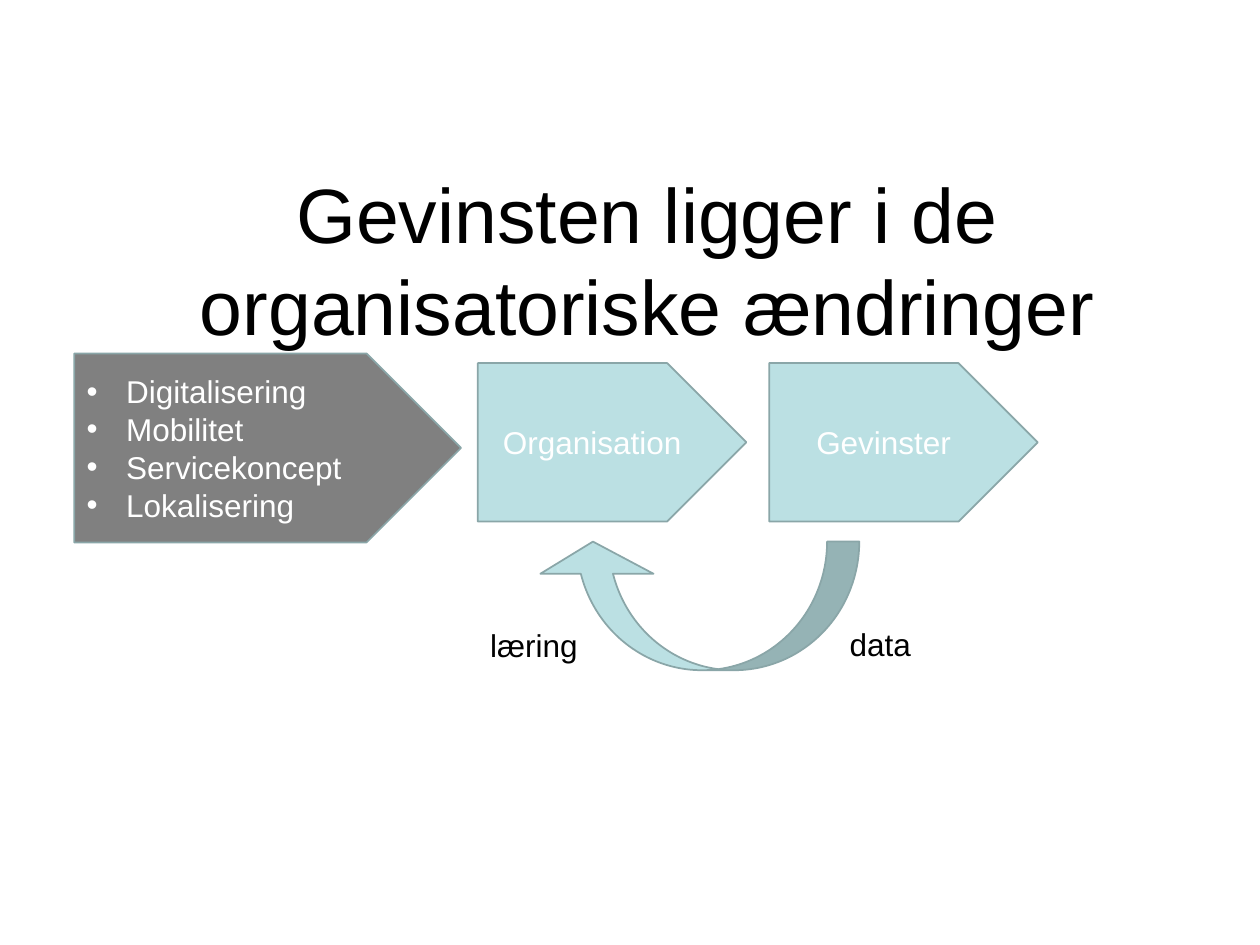
from dataclasses import dataclass

from lxml.etree import SubElement
from pptx import Presentation
from pptx.enum.shapes import MSO_SHAPE
from pptx.enum.text import MSO_ANCHOR, PP_ALIGN
from pptx.dml.color import RGBColor
from pptx.oxml.ns import qn
from pptx.util import Pt

COLOURS = {
    "grey": "808080",
    "aqua": "BBE0E3",
    "edge": "8AA6A8",
    "white": "FFFFFF",
    "black": "000000",
}
FONT = "Arial"
INDENT = 22.5


@dataclass
class Box:
    left: float
    top: float
    width: float
    height: float

    def frame(self) -> tuple:
        return Pt(self.left), Pt(self.top), Pt(self.width), Pt(self.height)


@dataclass
class Step:
    box: Box
    fill: str
    lines: list[str]
    bullets: bool = False


@dataclass
class Label:
    box: Box
    text: str


def colour(name: str) -> RGBColor:
    return RGBColor.from_string(COLOURS[name])


def write(frame, lines: list[str], size: float, tint: str, align) -> None:
    for i, line in enumerate(lines):
        para = frame.paragraphs[0] if i == 0 else frame.add_paragraph()
        para.text = line
        para.alignment = align
        para.font.name = FONT
        para.font.size = Pt(size)
        para.font.color.rgb = colour(tint)


def bullet(para) -> None:
    props = para._p.get_or_add_pPr()
    props.set("marL", str(Pt(INDENT)))
    props.set("indent", str(Pt(-INDENT)))
    SubElement(props, qn("a:buFont"), typeface=FONT)
    SubElement(props, qn("a:buChar"), char="•")


def draw_shape(slide, kind, box: Box, fill: str):
    shape = slide.shapes.add_shape(kind, *box.frame())
    shape.shadow.inherit = False
    shape.fill.solid()
    shape.fill.fore_color.rgb = colour(fill)
    shape.line.color.rgb = colour("edge")
    shape.line.width = Pt(1)
    return shape


def draw_step(slide, step: Step) -> None:
    shape = draw_shape(slide, MSO_SHAPE.PENTAGON, step.box, step.fill)
    frame = shape.text_frame
    frame.vertical_anchor = MSO_ANCHOR.MIDDLE
    align = PP_ALIGN.LEFT if step.bullets else PP_ALIGN.CENTER
    write(frame, step.lines, 18, "white", align)
    if step.bullets:
        for para in frame.paragraphs:
            bullet(para)


def draw_title(slide, label: Label) -> None:
    frame = slide.shapes.add_textbox(*label.box.frame()).text_frame
    frame.word_wrap = True
    frame.vertical_anchor = MSO_ANCHOR.MIDDLE
    frame.margin_left = frame.margin_right = 0
    frame.margin_top = frame.margin_bottom = 0
    write(frame, [label.text], 44, "black", PP_ALIGN.CENTER)


def draw_label(slide, label: Label) -> None:
    frame = slide.shapes.add_textbox(*label.box.frame()).text_frame
    frame.word_wrap = False
    write(frame, [label.text], 18, "black", PP_ALIGN.LEFT)


def draw_loop(slide, box: Box) -> None:
    arrow = draw_shape(slide, MSO_SHAPE.CURVED_UP_ARROW, box, "aqua")
    for i, value in enumerate((0.25, 0.88, 0.25)):
        arrow.adjustments[i] = value
    arrow._element.spPr.find(qn("a:xfrm")).set("flipH", "1")


TOOLS = Step(
    Box(42.5, 202, 221, 108), "grey",
    ["Digitalisering", "Mobilitet", "Servicekoncept", "Lokalisering"], True)
TITLE = Label(Box(46, 116, 648, 63.5),
              "Gevinsten ligger i de organisatoriske ændringer")
STEPS = [
    Step(Box(273, 207.5, 153.5, 90.5), "aqua", ["Organisation"]),
    Step(Box(439.5, 207.5, 153.5, 90.5), "aqua", ["Gevinster"]),
]
LOOP = Box(306.5, 309.5, 184.5, 73.5)
LABELS = [
    Label(Box(478.5, 353.5, 50, 29), "data"),
    Label(Box(273, 354, 65, 29), "læring"),
]


def main() -> None:
    deck = Presentation()
    deck.slide_width, deck.slide_height = Pt(720), Pt(540)
    slide = deck.slides.add_slide(deck.slide_layouts[6])

    # Starting point and heading
    draw_step(slide, TOOLS)
    draw_title(slide, TITLE)

    # Steps that follow
    for step in STEPS:
        draw_step(slide, step)

    # Feedback loop
    draw_loop(slide, LOOP)
    for label in LABELS:
        draw_label(slide, label)

    deck.save("out.pptx")


if __name__ == "__main__":
    main()
